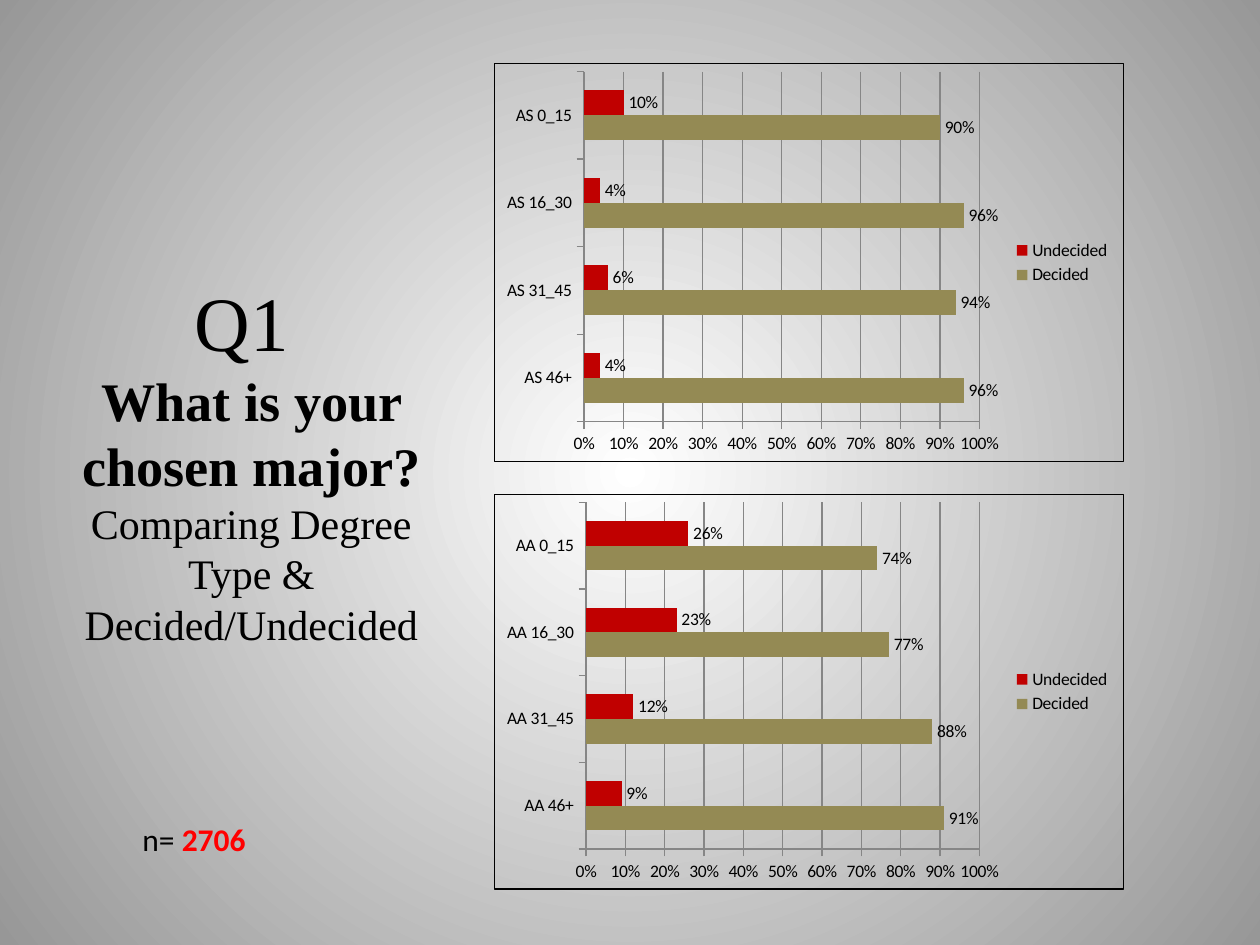
from lxml.etree import SubElement
from pptx import Presentation
from pptx.chart.data import CategoryChartData
from pptx.dml.color import RGBColor
from pptx.enum.chart import XL_CHART_TYPE, XL_LABEL_POSITION, XL_LEGEND_POSITION, XL_TICK_MARK
from pptx.enum.text import MSO_ANCHOR, PP_ALIGN
from pptx.oxml import parse_xml
from pptx.oxml.ns import nsdecls, qn
from pptx.util import Inches, Pt

HUES = {
    "text": "000000", "count": "FF0000", "grid": "868686", "center": "FFFFFF",
    "edge": "979797", "Decided": "948A54", "Undecided": "C00000",
}
BANDS = ["46+", "31_45", "16_30", "0_15"]
AS_VALS = {"Decided": [0.96, 0.94, 0.96, 0.9], "Undecided": [0.04, 0.06, 0.04, 0.1]}
AA_VALS = {"Decided": [0.91, 0.88, 0.77, 0.74], "Undecided": [0.09, 0.12, 0.23, 0.26]}


def hue(name):
    """Return a named colour."""
    return RGBColor.from_string(HUES[name])


def style(font, face, size, color="text", bold=False):
    """Set the look of a font."""
    font.name, font.size, font.bold = face, Pt(size), bold
    font.color.rgb = hue(color)


def paint(slide):
    """Fill the background with a round gradient."""
    fill = slide.background.fill
    fill.gradient()
    for stop, name, spot in zip(fill.gradient_stops, ("center", "edge"), (0, 1)):
        stop.color.rgb = hue(name)
        stop.position = spot
    grad = slide.background._cSld.find(".//" + qn("a:gradFill"))
    grad.remove(grad.find(qn("a:lin")))
    ring = SubElement(grad, qn("a:path"), {"path": "circle"})
    SubElement(ring, qn("a:fillToRect"), {side: "50000" for side in "ltrb"})


def place(shape, box):
    """Move a shape into a box given in inches."""
    shape.left, shape.top, shape.width, shape.height = map(Inches, box)


def add_title(slide, box):
    """Write the question in the title placeholder."""
    title = slide.shapes.title
    place(title, box)
    frame = title.text_frame
    frame.word_wrap = True
    frame.vertical_anchor = MSO_ANCHOR.MIDDLE
    para = frame.paragraphs[0]
    para.alignment = PP_ALIGN.CENTER
    lines = [
        ("Q1 ", 44, False),
        ("What is your chosen major?", 31, True),
        ("Comparing Degree Type & Decided/Undecided", 24, False),
    ]
    for spot, (text, size, bold) in enumerate(lines):
        if spot:
            para.add_line_break()
        run = para.add_run()
        run.text = text
        style(run.font, "Times New Roman", size, bold=bold)


def add_count(slide, box):
    """Write the sample size."""
    frame = slide.shapes.add_textbox(*map(Inches, box)).text_frame
    frame.word_wrap = True
    para = frame.paragraphs[0]
    para.alignment = PP_ALIGN.CENTER
    for text, color, bold in (("n= ", "text", False), ("2706", "count", True)):
        run = para.add_run()
        run.text = text
        style(run.font, "Calibri", 18, color, bold)


def add_bars(slide, box, degree, rows):
    """Draw the framed bar chart of one degree type."""
    data = CategoryChartData(number_format="0%")
    data.categories = [f"{degree} {band}" for band in BANDS]
    for name, vals in rows.items():
        data.add_series(name, vals)
    kind = XL_CHART_TYPE.BAR_CLUSTERED
    chart = slide.shapes.add_chart(kind, *map(Inches, box), data).chart
    style(chart.font, "Calibri", 10)
    chart.has_title = False
    chart.has_legend = True
    chart.legend.position = XL_LEGEND_POSITION.RIGHT
    chart.legend.include_in_layout = False
    scale = chart.value_axis
    scale.minimum_scale, scale.maximum_scale, scale.major_unit = 0, 1, 0.1
    scale.has_major_gridlines = True
    scale.tick_labels.number_format = "0%"
    scale.tick_labels.number_format_is_linked = False
    for axis in (scale, chart.category_axis):
        axis.major_tick_mark = XL_TICK_MARK.OUTSIDE
    for part in (scale, chart.category_axis, scale.major_gridlines):
        part.format.line.color.rgb = hue("grid")
        part.format.line.width = Pt(0.75)
    plot = chart.plots[0]
    plot.gap_width, plot.overlap, plot.vary_by_categories = 150, 0, False
    for row in plot.series:
        row.format.fill.solid()
        row.format.fill.fore_color.rgb = hue(row.name)
        row.invert_if_negative = False
        tags = row.data_labels
        tags.show_value = True
        tags.number_format = "0%"
        tags.number_format_is_linked = False
        tags.position = XL_LABEL_POSITION.OUTSIDE_END
    frame = parse_xml(
        f'<c:spPr {nsdecls("c", "a")}><a:noFill/><a:ln w="{Pt(0.75)}"><a:solidFill>'
        f'<a:srgbClr val="{HUES["text"]}"/></a:solidFill></a:ln></c:spPr>'
    )
    chart._chartSpace.find(qn("c:chart")).addnext(frame)


def main():
    """Build and save the slide."""
    deck = Presentation()
    deck.slide_width, deck.slide_height = Inches(10), Inches(7.5)
    slide = deck.slides.add_slide(deck.slide_layouts[5])
    paint(slide)
    add_title(slide, (0.33, 1.58, 3.33, 4.17))
    add_count(slide, (0.83, 6.46, 1.42, 0.71))
    add_bars(slide, (3.92, 0.5, 5, 3.17), "AS", AS_VALS)
    add_bars(slide, (3.92, 3.92, 5, 3.14), "AA", AA_VALS)
    deck.save("out.pptx")


if __name__ == "__main__":
    main()
